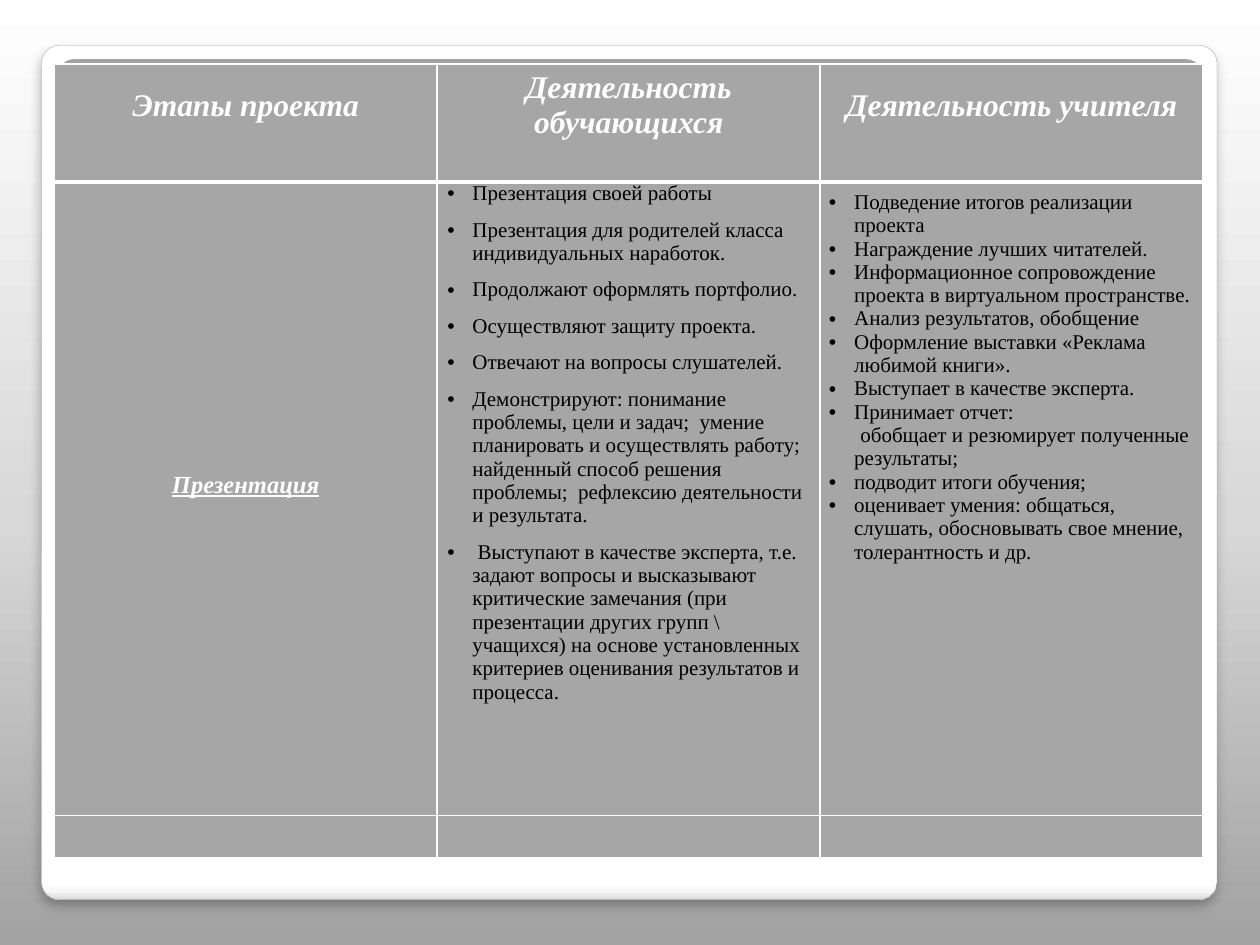
from dataclasses import dataclass

from lxml.etree import SubElement
from pptx import Presentation
from pptx.dml.color import RGBColor
from pptx.enum.shapes import MSO_SHAPE
from pptx.enum.text import MSO_ANCHOR, PP_ALIGN
from pptx.oxml.ns import qn
from pptx.util import Inches, Pt


@dataclass(frozen=True)
class Theme:
    font: str = "Times New Roman"
    white: str = "FFFFFF"
    black: str = "000000"
    cell: str = "A6A6A6"
    edge: str = "A4A4A4"
    header_size: float = 18
    stage_size: float = 14
    list_size: float = 12


@dataclass(frozen=True)
class Gradient:
    stops: tuple[tuple[int, str], ...]
    angle: int = 90
    circle: tuple[int, ...] = ()


@dataclass(frozen=True)
class Panel:
    box: tuple[float, float, float, float]
    gradient: Gradient


@dataclass(frozen=True)
class Item:
    text: str
    bullet: bool = True


@dataclass(frozen=True)
class CellStyle:
    size: float
    color: str
    margins: tuple[float, float, float, float]
    emphasis: bool = False
    underline: bool = False
    centered: bool = False
    space_after: float = 0


THEME = Theme()
BACKGROUND = Gradient(((0, "A2A2A2"), (45, "D8D8D8"), (100, "FFFFFF")), 270)
FRAME = Panel(
    (0.33, 0.36, 9.33, 6.78),
    Gradient(((0, "FFFFFF"), (98, "FFFFFF"), (99, "F7F7F7"), (100, "DADADA"))),
)
INNER = Panel(
    (0.46, 0.47, 9.08, 6),
    Gradient(((0, "FFFFFF"), (55, "E1E1E1"), (100, "A2A2A2")), circle=(50, 175, 50, -75)),
)

# Margins are left, top, right, bottom.
HEADER = CellStyle(THEME.header_size, THEME.white, (0.1, 0.05, 0.1, 0.33), True, centered=True)
STAGE = CellStyle(THEME.stage_size, THEME.white, (0.07, 0.07, 0.07, 0.29), True, True, True)
PUPILS = CellStyle(THEME.list_size, THEME.black, (0.08, 0, 0.08, 0), space_after=7.5)
TEACHER = CellStyle(THEME.list_size, THEME.black, (0.07, 0.07, 0.07, 0.07))
SPARE = CellStyle(THEME.list_size, THEME.black, (0.1, 0, 0.1, 0))

HEADINGS = ["Этапы проекта", "Деятельность обучающихся", "Деятельность учителя"]
PUPIL_ITEMS = [
    Item("Презентация своей работы"),
    Item("Презентация для родителей класса индивидуальных наработок."),
    Item("Продолжают оформлять портфолио."),
    Item("Осуществляют защиту проекта."),
    Item("Отвечают на вопросы слушателей."),
    Item("Демонстрируют: понимание проблемы, цели и задач;  умение планировать и "
         "осуществлять работу; найденный способ решения проблемы;  рефлексию "
         "деятельности и результата."),
    Item(" Выступают в качестве эксперта, т.е. задают вопросы и высказывают критические "
         "замечания (при презентации других групп \\ учащихся) на основе установленных "
         "критериев оценивания результатов и процесса."),
]
TEACHER_ITEMS = [
    Item("Подведение итогов реализации проекта"),
    Item("Награждение лучших читателей."),
    Item("Информационное сопровождение проекта в виртуальном пространстве."),
    Item("Анализ результатов, обобщение"),
    Item("Оформление выставки «Реклама любимой книги»."),
    Item("Выступает в качестве эксперта."),
    Item("Принимает отчет:"),
    Item("обобщает и резюмирует полученные результаты;", bullet=False),
    Item("подводит итоги обучения;"),
    Item("оценивает умения: общаться, слушать, обосновывать свое мнение, толерантность и др."),
]
ROWS = [
    [([Item(heading, False)], HEADER) for heading in HEADINGS],
    [([Item("Презентация", False)], STAGE), (PUPIL_ITEMS, PUPILS), (TEACHER_ITEMS, TEACHER)],
    [([], SPARE)] * len(HEADINGS),
]
ROW_HEIGHTS = [0.93, 5.03, 0.33]
TABLE_LEFT, TABLE_TOP, COLUMN_WIDTH = 0.43, 0.51, 3.04


def child(parent, tag: str, **attributes):
    return SubElement(parent, qn(f"a:{tag}"),
                      {key: str(value) for key, value in attributes.items()})


def add_color(parent, color: str):
    return child(parent, "srgbClr", val=color)


def apply_gradient(fill, element, gradient: Gradient) -> None:
    """Give a fill any number of stops, linear or circular."""
    fill.gradient()
    grad = element.find(f".//{qn('a:gradFill')}")
    for old in list(grad):
        grad.remove(old)
    stops = child(grad, "gsLst")
    for position, color in gradient.stops:
        add_color(child(stops, "gs", pos=position * 1000), color)
    if gradient.circle:
        target = {side: value * 1000 for side, value in zip("ltrb", gradient.circle)}
        child(child(grad, "path", path="circle"), "fillToRect", **target)
    else:
        child(grad, "lin", ang=gradient.angle * 60000, scaled=0)


def add_panel(slide, panel: Panel):
    shape = slide.shapes.add_shape(MSO_SHAPE.ROUNDED_RECTANGLE, *map(Inches, panel.box))
    shape.adjustments[0] = 0.021
    shape.shadow.inherit = False
    apply_gradient(shape.fill, shape._element, panel.gradient)
    shape.line.fill.background()
    return shape


def add_frame(slide) -> None:
    frame = add_panel(slide, FRAME)
    frame.line.color.rgb = RGBColor.from_string(THEME.edge)
    frame.line.width = Pt(0.16)
    effects = frame._element.spPr.find(qn("a:effectLst"))
    shadow = child(effects, "outerShdw", blurRad=Pt(6), dist=Pt(4), dir=90 * 60000,
                   algn="t", rotWithShape=0)
    child(add_color(shadow, THEME.black), "alpha", val=25000)


def add_borders(cell, widths: dict[str, float]) -> None:
    properties = cell._tc.get_or_add_tcPr()
    for side, width in widths.items():
        line = child(properties, f"ln{side}", w=Pt(width))
        add_color(child(line, "solidFill"), THEME.white)


def write_item(paragraph, item: Item, style: CellStyle) -> None:
    run = paragraph.add_run()
    run.text = item.text
    formats = {"name": THEME.font, "size": Pt(style.size), "bold": style.emphasis,
               "italic": style.emphasis, "underline": style.underline}
    for attribute, value in formats.items():
        setattr(run.font, attribute, value)
    run.font.color.rgb = RGBColor.from_string(style.color)
    paragraph.space_after = Pt(style.space_after)
    if style.centered:
        paragraph.alignment = PP_ALIGN.CENTER
        return
    properties = paragraph._p.get_or_add_pPr()
    properties.set("marL", str(Inches(0.2)))
    properties.set("indent", str(Inches(-0.2 if item.bullet else 0.05)))
    if item.bullet:
        child(properties, "buFont", typeface="Arial")
        child(properties, "buChar", char="•")


def fill_cell(cell, items: list[Item], style: CellStyle, is_header: bool, below_header: bool) -> None:
    add_borders(cell, {"L": 1, "R": 1, "T": 3 if below_header else 1, "B": 3 if is_header else 1})
    cell.fill.solid()
    cell.fill.fore_color.rgb = RGBColor.from_string(THEME.cell)
    for side, margin in zip(("left", "top", "right", "bottom"), style.margins):
        setattr(cell, f"margin_{side}", Inches(margin))
    cell.vertical_anchor = MSO_ANCHOR.MIDDLE if style.centered else MSO_ANCHOR.TOP
    frame = cell.text_frame
    for index, item in enumerate(items):
        write_item(frame.add_paragraph() if index else frame.paragraphs[0], item, style)


def add_stage_table(slide) -> None:
    columns = len(HEADINGS)
    table = slide.shapes.add_table(
        len(ROWS), columns, Inches(TABLE_LEFT), Inches(TABLE_TOP),
        Inches(COLUMN_WIDTH * columns), Inches(sum(ROW_HEIGHTS))).table
    for column in table.columns:
        column.width = Inches(COLUMN_WIDTH)
    for index, (cells, height) in enumerate(zip(ROWS, ROW_HEIGHTS)):
        table.rows[index].height = Inches(height)
        for column, (items, style) in enumerate(cells):
            fill_cell(table.cell(index, column), items, style, index == 0, index == 1)


def main() -> None:
    deck = Presentation()
    deck.slide_width, deck.slide_height = Inches(10), Inches(7.5)
    slide = deck.slides.add_slide(deck.slide_layouts[6])
    apply_gradient(slide.background.fill, slide._element, BACKGROUND)
    add_frame(slide)
    add_panel(slide, INNER)
    add_stage_table(slide)
    deck.save("out.pptx")


if __name__ == "__main__":
    main()
